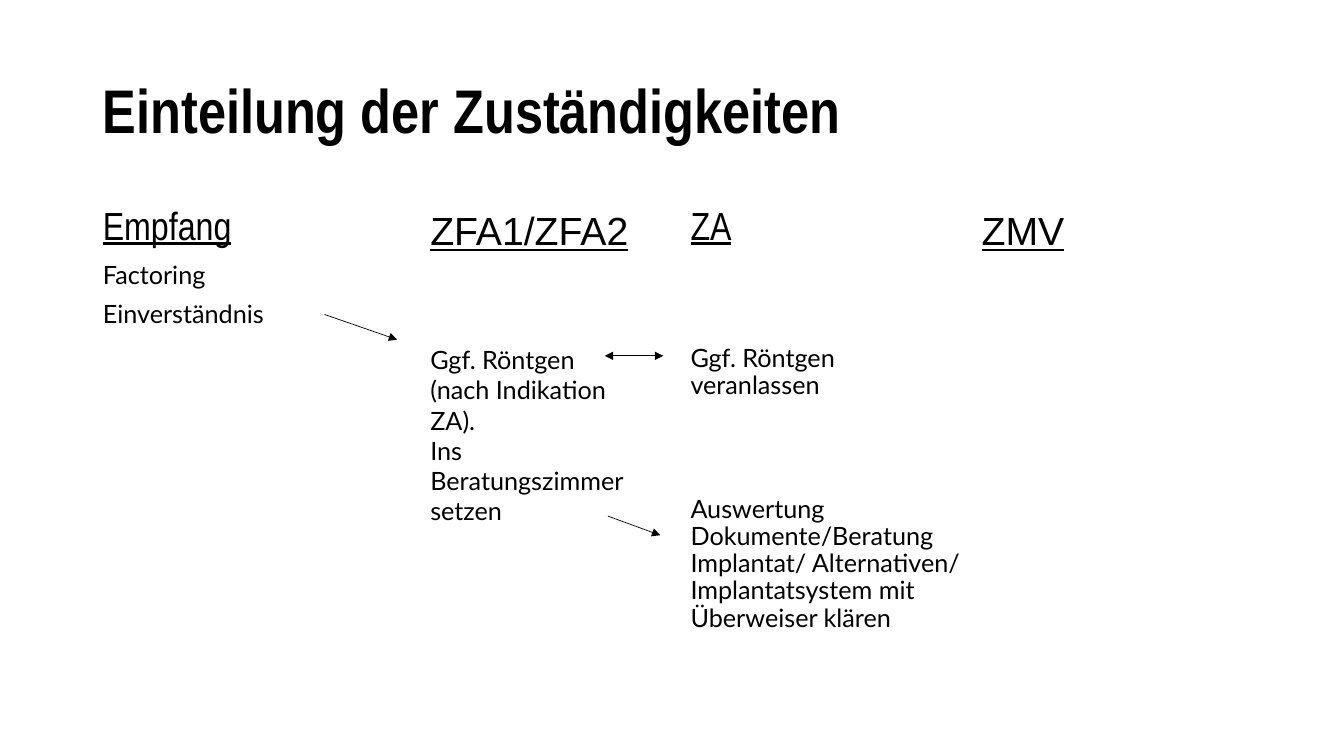
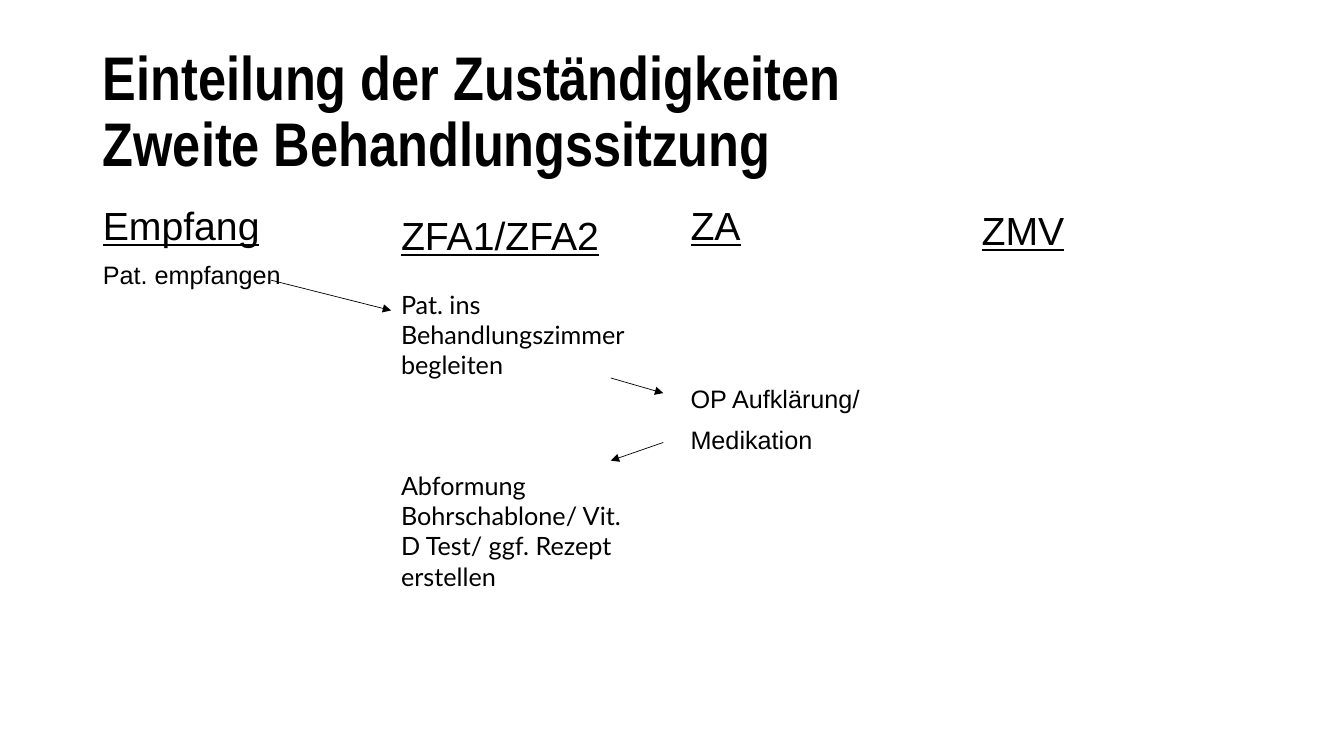
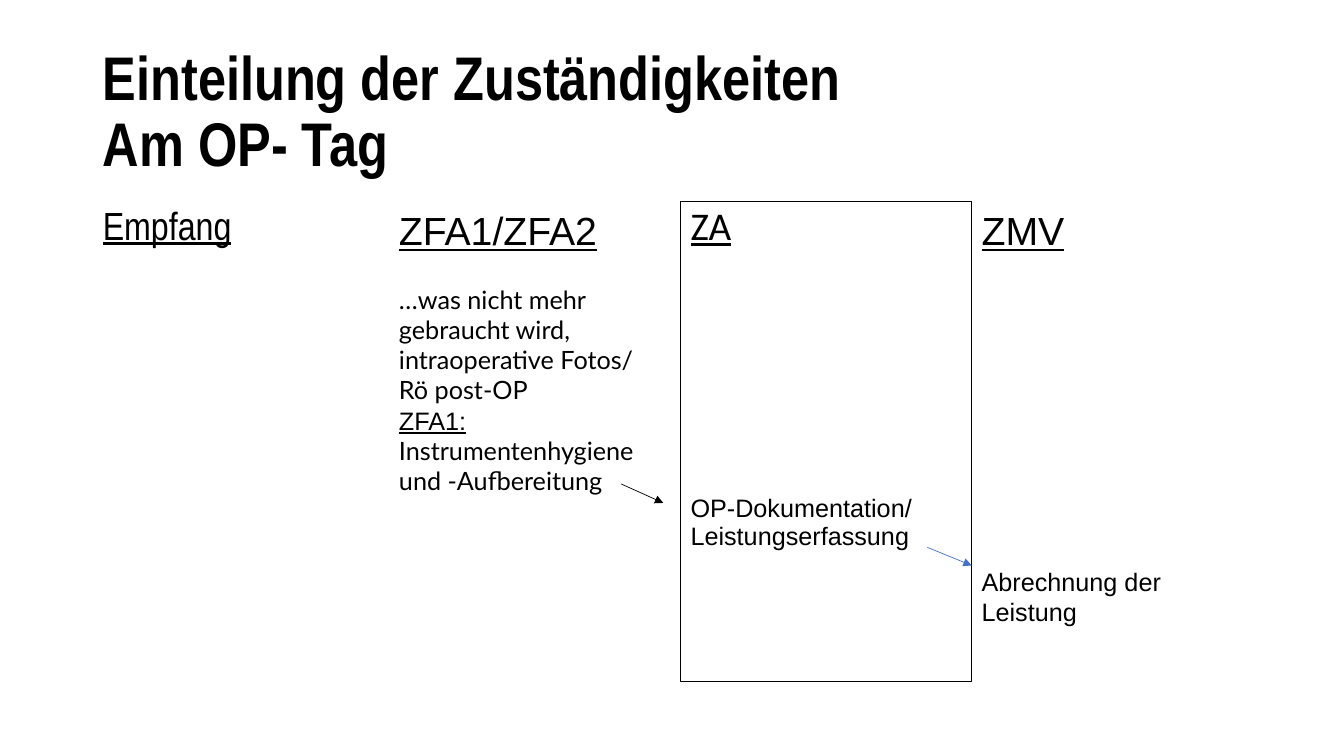
from dataclasses import dataclass

from lxml.etree import SubElement
from pptx import Presentation
from pptx.dml.color import RGBColor
from pptx.enum.shapes import MSO_CONNECTOR
from pptx.enum.text import MSO_ANCHOR, MSO_AUTO_SIZE, PP_ALIGN
from pptx.oxml.ns import qn
from pptx.util import Inches, Pt

WIDTH, HEIGHT = Inches(13.33), Inches(7.5)
BLACK, WHITE, BLUE = "000000", "FFFFFF", "4472C4"
NARROW, SANS, LATO, CALIBRI = "Arial Narrow", "Arial", "Lato", "Calibri"
TOP, LIST_HEIGHT = 26.67, 63.47
TITLE_AREA = (6.9, 5.33, 86.25, 19.33)
RECEPTION_AREA = (6.9, TOP, 20.85, LIST_HEIGHT)
DENTIST_AREA = (50.63, TOP, 21.68, LIST_HEIGHT)
BILLING_LEFT, BILLING_WIDTH = 72.3, 20.1
TITLE = "Einteilung der Zuständigkeiten"


@dataclass
class Entry:
    """One paragraph of a column, with the gap above it in points."""
    text: str
    font: str = LATO
    gap: float = 0
    size: float = 18
    underline: bool = False


def heading(text, font=SANS):
    """Return the underlined heading of a column."""
    return Entry(text, font, size=28, underline=True)


def color(code):
    """Turn a hex string into a colour."""
    return RGBColor.from_string(code)


def across(share):
    """Return a percentage of the slide width."""
    return round(WIDTH * share / 100)


def down(share):
    """Return a percentage of the slide height."""
    return round(HEIGHT * share / 100)


def place(shape, area):
    """Move a shape to an area given in percent of the slide."""
    left, top, width, height = area
    shape.left, shape.top = across(left), down(top)
    shape.width, shape.height = across(width), down(height)


def style(paragraph, font, size, bold=False, underline=False):
    """Format a left-aligned paragraph without a bullet."""
    properties = paragraph._p.get_or_add_pPr()
    properties.set("marL", "0")
    properties.set("indent", "0")
    SubElement(properties, qn("a:buNone"))
    paragraph.alignment = PP_ALIGN.LEFT
    paragraph.font.name, paragraph.font.size = font, Pt(size)
    paragraph.font.bold, paragraph.font.underline = bold, underline
    paragraph.font.color.rgb = color(BLACK)


def write(shape, entries, spacing):
    """Fill a shape with the entries of one column."""
    frame = shape.text_frame
    frame.word_wrap = True
    frame.auto_size = MSO_AUTO_SIZE.NONE
    frame.vertical_anchor = MSO_ANCHOR.TOP
    for index, entry in enumerate(entries):
        paragraph = frame.add_paragraph() if index else frame.paragraphs[0]
        paragraph.text = entry.text
        style(paragraph, entry.font, entry.size, underline=entry.underline)
        paragraph.line_spacing = spacing
        paragraph.space_before = Pt(entry.gap)


def add_page(deck, title, reception, dentist):
    """Add a slide with its title and the two list columns."""
    page = deck.slides.add_slide(deck.slide_layouts[3])
    title_box, reception_box, dentist_box = page.placeholders
    place(title_box, TITLE_AREA)
    frame = title_box.text_frame
    frame.text = title
    frame.auto_size = MSO_AUTO_SIZE.NONE
    frame.vertical_anchor = MSO_ANCHOR.MIDDLE
    style(frame.paragraphs[0], NARROW, 44, bold=True)
    frame.paragraphs[0].line_spacing = 0.9
    place(reception_box, RECEPTION_AREA)
    write(reception_box, reception, 0.9)
    place(dentist_box, DENTIST_AREA)
    write(dentist_box, dentist, 0.9)
    return page


def add_column(page, area, entries):
    """Add a column as a text box."""
    box = page.shapes.add_textbox(0, 0, 0, 0)
    place(box, area)
    write(box, entries, 1.0)


def add_arrow(page, start, end, both=False, line_color=BLACK):
    """Draw a thin arrow between two points in percent of the slide."""
    arrow = page.shapes.add_connector(
        MSO_CONNECTOR.STRAIGHT, across(start[0]), down(start[1]), across(end[0]), down(end[1]))
    arrow.line.width = Pt(0.5)
    arrow.line.color.rgb = color(line_color)
    line = arrow.line._get_or_add_ln()
    for tag in ("a:headEnd", "a:tailEnd") if both else ("a:tailEnd",):
        SubElement(line, qn(tag), type="triangle")
    SubElement(arrow._element.spPr, qn("a:effectLst"))


def frame_dentist(page):
    """Outline the dentist column."""
    box = page.placeholders[2]
    box.fill.solid()
    box.fill.fore_color.rgb = color(WHITE)
    box.line.color.rgb = color(BLACK)
    box.line.width = Pt(1)


def build_first_session(deck):
    """Build the slide about the first session."""
    page = add_page(
        deck, TITLE,
        [heading("Empfang", NARROW), Entry("Factoring", gap=10),
         Entry("Einverständnis", gap=8.5)],
        [heading("ZA", NARROW), Entry("Ggf. Röntgen veranlassen", gap=68.9),
         Entry("Auswertung Dokumente/Beratung Implantat/ Alternativen/ "
               "Implantatsystem mit Überweiser klären", gap=68.9)])
    add_column(page, (BILLING_LEFT, TOP, BILLING_WIDTH, 7.6), [heading("ZMV")])
    add_column(page, (31.28, TOP, 16.35, 44), [
        heading("ZFA1/ZFA2"),
        Entry("Ggf. Röntgen (nach Indikation ZA).", gap=64.8),
        Entry("Ins Beratungszimmer setzen")])
    add_arrow(page, (24.15, 41.6), (29.55, 44.93))
    add_arrow(page, (45, 47.07), (49.35, 47.07), both=True)
    add_arrow(page, (45.23, 68.27), (49.13, 70.8))


def build_second_session(deck):
    """Build the slide about the second session."""
    page = add_page(
        deck, TITLE + "\vZweite Behandlungssitzung",
        [heading("Empfang"), Entry("Pat. empfangen", SANS, 10)],
        [heading("ZA"), Entry("OP Aufklärung/", SANS, 98.3),
         Entry("Medikation", SANS, 10)])
    add_column(page, (BILLING_LEFT, TOP, BILLING_WIDTH, 31.87), [heading("ZMV")])
    add_column(page, (29.1, 27.33, 18.6, 64.13), [
        heading("ZFA1/ZFA2"),
        Entry("Pat. ins Behandlungszimmer begleiten", gap=21.6),
        Entry("Abformung Bohrschablone/ Vit. D Test/ ggf. Rezept erstellen", gap=64.8)])
    add_arrow(page, (20.18, 37.07), (29.1, 41.07))
    add_arrow(page, (45.45, 50), (49.35, 52))
    add_arrow(page, (49.35, 58.53), (45.45, 60.93))


def build_surgery_day(deck):
    """Build the slide about the day of surgery."""
    page = add_page(
        deck, TITLE + "\vAm OP- Tag",
        [heading("Empfang", NARROW)],
        [heading("ZA", CALIBRI),
         Entry("OP-Dokumentation/ Leistungserfassung", SANS, 176.5)])
    frame_dentist(page)
    add_column(page, (BILLING_LEFT, TOP, BILLING_WIDTH, 69.6), [
        heading("ZMV"), Entry("Abrechnung der Leistung", SANS, 223.2)])
    add_column(page, (28.95, TOP, 19.5, 40), [
        heading("ZFA1/ZFA2"),
        Entry("…was nicht mehr gebraucht wird, intraoperative Fotos/ Rö post-OP", gap=21.6),
        Entry("ZFA1:", SANS, underline=True),
        Entry("Instrumentenhygiene und -Aufbereitung")])
    add_arrow(page, (46.2, 64), (49.35, 66.53))
    add_arrow(page, (69, 72.4), (72.3, 74.8), line_color=BLUE)


def main():
    """Build and save the deck."""
    deck = Presentation()
    deck.slide_width, deck.slide_height = WIDTH, HEIGHT
    build_first_session(deck)
    build_second_session(deck)
    build_surgery_day(deck)
    deck.save("out.pptx")


if __name__ == "__main__":
    main()
